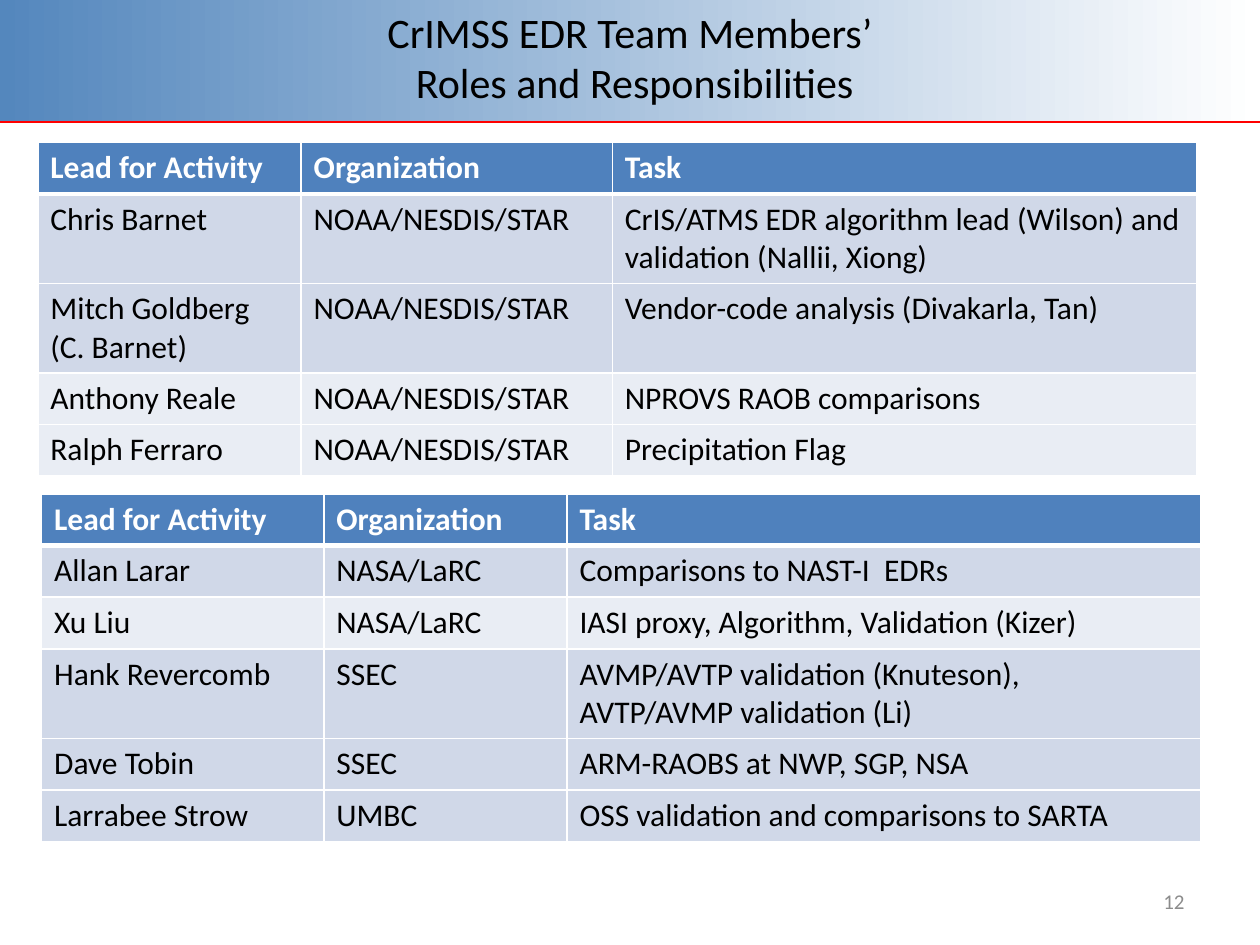
from dataclasses import dataclass

from lxml import etree
from pptx import Presentation
from pptx.dml.color import RGBColor
from pptx.enum.shapes import MSO_CONNECTOR, MSO_SHAPE
from pptx.enum.text import MSO_ANCHOR, PP_ALIGN
from pptx.oxml.ns import qn
from pptx.util import Inches, Pt

RECT, LINE = MSO_SHAPE.RECTANGLE, MSO_CONNECTOR.STRAIGHT
MID = MSO_ANCHOR.MIDDLE
MIDDLE, RIGHT = PP_ALIGN.CENTER, PP_ALIGN.RIGHT


@dataclass(frozen=True)
class Theme:
    face: str = "Calibri"
    black: str = "000000"
    white: str = "FFFFFF"
    grey: str = "8C8C8C"
    red: str = "FF0000"
    sky: str = "5487BD"
    head: str = "4F81BD"
    dark: str = "D0D8E8"
    light: str = "E9EDF4"
    title: int = 24
    body: int = 18
    note: int = 12


class Deck:
    """Draws styled elements on the current slide."""

    def __init__(self, theme, slide):
        self.theme, self.slide = theme, slide

    def style(self, para, size, color, bold=False):
        form = {"name": self.theme.face, "size": Pt(size), "bold": bold}
        for key, value in form.items():
            setattr(para.font, key, value)
        para.font.color.rgb = RGBColor.from_string(color)

    def band(self, x, y, w, h, ends):
        shape = self.slide.shapes.add_shape(RECT, *map(Inches, (x, y, w, h)))
        shape.shadow.inherit = False
        shape.line.fill.background()
        shape.fill.gradient()
        shape.fill.gradient_angle = 0
        for stop, color in zip(shape.fill.gradient_stops, ends):
            stop.color.rgb = RGBColor.from_string(color)

    def rule(self, x, y, end, color, width):
        line = self.slide.shapes.add_connector(LINE, *map(Inches, (x, y, end, y)))
        line.line.color.rgb = RGBColor.from_string(color)
        line.line.width = Pt(width)
        etree.SubElement(line._element.spPr, qn("a:effectLst"))

    def text(self, x, y, w, h, words, size, color, align):
        box = self.slide.shapes.add_textbox(*map(Inches, (x, y, w, h)))
        frame = box.text_frame
        form = {"word_wrap": True, "vertical_anchor": MID}
        for key, value in form.items():
            setattr(frame, key, value)
        para = frame.paragraphs[0]
        para.text, para.alignment = words, align
        self.style(para, size, color)

    def edge(self, cell, top, base):
        props = cell._tc.get_or_add_tcPr()
        for side, width in zip("LRTB", (1, 1, top, base)):
            line = etree.SubElement(props, qn(f"a:ln{side}"), w=str(Pt(width)))
            fill = etree.SubElement(line, qn("a:solidFill"))
            etree.SubElement(fill, qn("a:srgbClr"), val=self.theme.white)

    def cell(self, cell, words, row, fill):
        head = row == 0
        self.edge(cell, 3 if row == 1 else 1, 3 if head else 1)
        cell.fill.solid()
        cell.fill.fore_color.rgb = RGBColor.from_string(fill)
        cell.text = words
        for para in cell.text_frame.paragraphs:
            color = self.theme.white if head else self.theme.black
            self.style(para, self.theme.body, color, head)

    def table(self, x, y, cols, rows, fills, tall):
        heights = [0.71 if row in tall else 0.41 for row in range(len(rows))]
        size = (x, y, sum(cols), sum(heights))
        frame = self.slide.shapes.add_table(len(rows), len(cols), *map(Inches, size))
        grid = frame.table
        grid.horz_banding = False
        for col, width in zip(grid.columns, cols):
            col.width = Inches(width)
        for row, (line, fill) in enumerate(zip(rows, fills)):
            grid.rows[row].height = Inches(heights[row])
            for col, words in enumerate(line):
                self.cell(grid.cell(row, col), words, row, fill)


HEAD = ("Lead for Activity", "Organization", "Task")
STAR = "NOAA/NESDIS/STAR"
LARC = "NASA/LaRC"
NOAA = [
    HEAD,
    ("Chris Barnet", STAR,
     "CrIS/ATMS EDR algorithm lead (Wilson) and validation (Nallii, Xiong)"),
    ("Mitch Goldberg\n(C. Barnet)", STAR, "Vendor-code analysis (Divakarla, Tan)"),
    ("Anthony Reale", STAR, "NPROVS RAOB comparisons"),
    ("Ralph Ferraro", STAR, "Precipitation Flag"),
]
OTHERS = [
    HEAD,
    ("Allan Larar", LARC, "Comparisons to NAST-I  EDRs"),
    ("Xu Liu", LARC, "IASI proxy, Algorithm, Validation (Kizer)"),
    ("Hank Revercomb", "SSEC",
     "AVMP/AVTP validation (Knuteson),\nAVTP/AVMP validation (Li)"),
    ("Dave Tobin", "SSEC", "ARM-RAOBS at NWP, SGP, NSA"),
    ("Larrabee Strow", "UMBC", "OSS validation and comparisons to SARTA"),
]


def main():
    show = Presentation()
    show.slide_width, show.slide_height = Inches(10), Inches(7.5)
    look = Theme()
    deck = Deck(look, show.slides.add_slide(show.slide_layouts[6]))
    head, dark, light = look.head, look.dark, look.light

    deck.band(0, -0.01, 10, 0.97, (look.sky, look.white))
    deck.rule(0, 0.97, 10, look.red, 1.25)
    deck.text(0.5, 0, 9, 0.9,
              "CrIMSS EDR Team Members’\v Roles and Responsibilities",
              look.title, look.black, MIDDLE)
    deck.table(0.33, 3.92, (2.24, 1.93, 5.03), OTHERS,
               (head, dark, light, dark, dark, dark), {3})
    deck.text(7.17, 6.95, 2.33, 0.4, "12", look.note, look.grey, RIGHT)
    deck.table(0.3, 1.13, (2.09, 2.47, 4.64), NOAA,
               (head, dark, dark, light, light), {1, 2})
    show.save("out.pptx")


if __name__ == "__main__":
    main()
